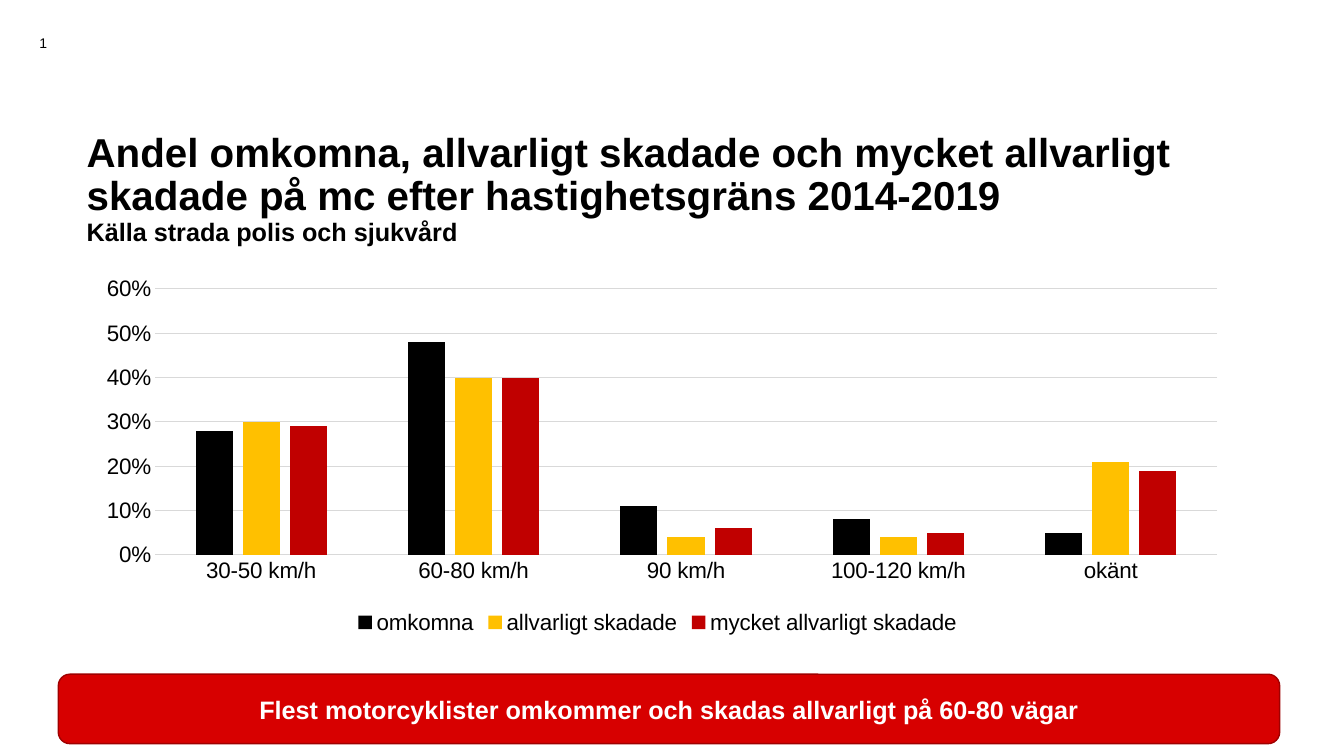
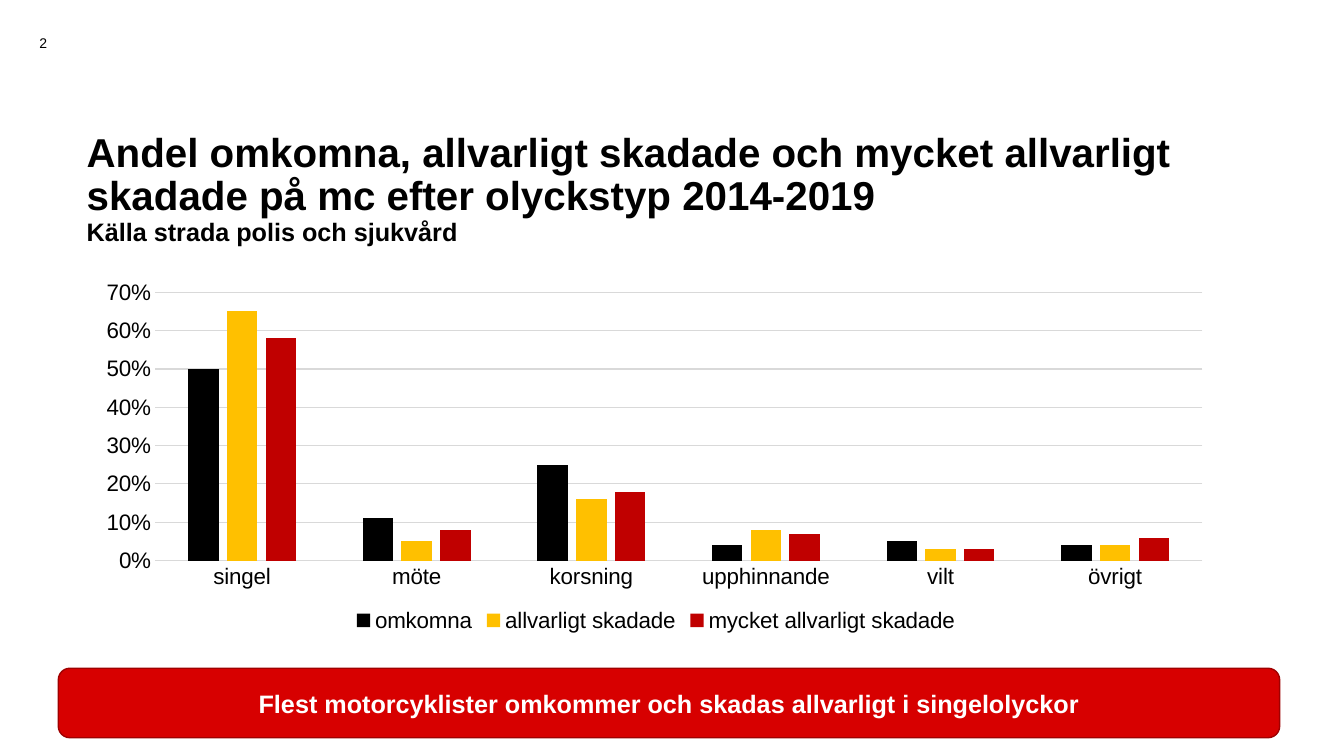
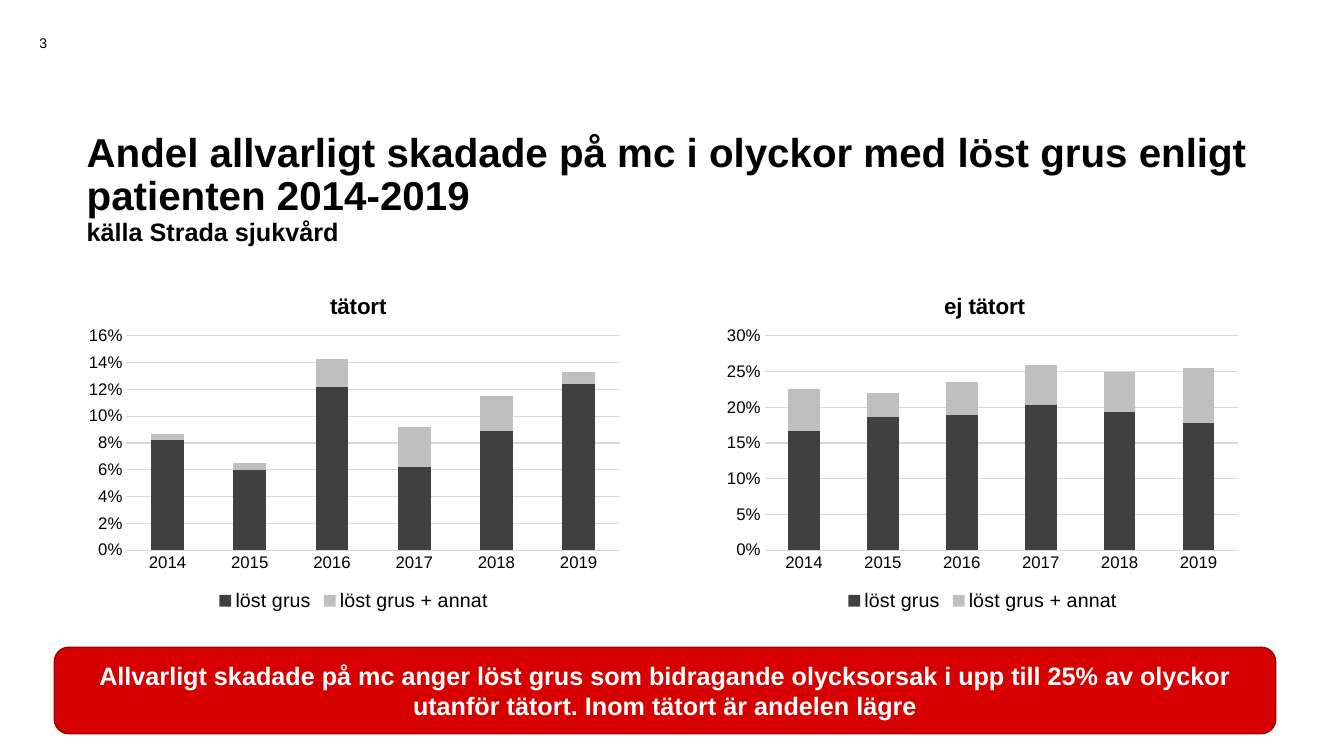
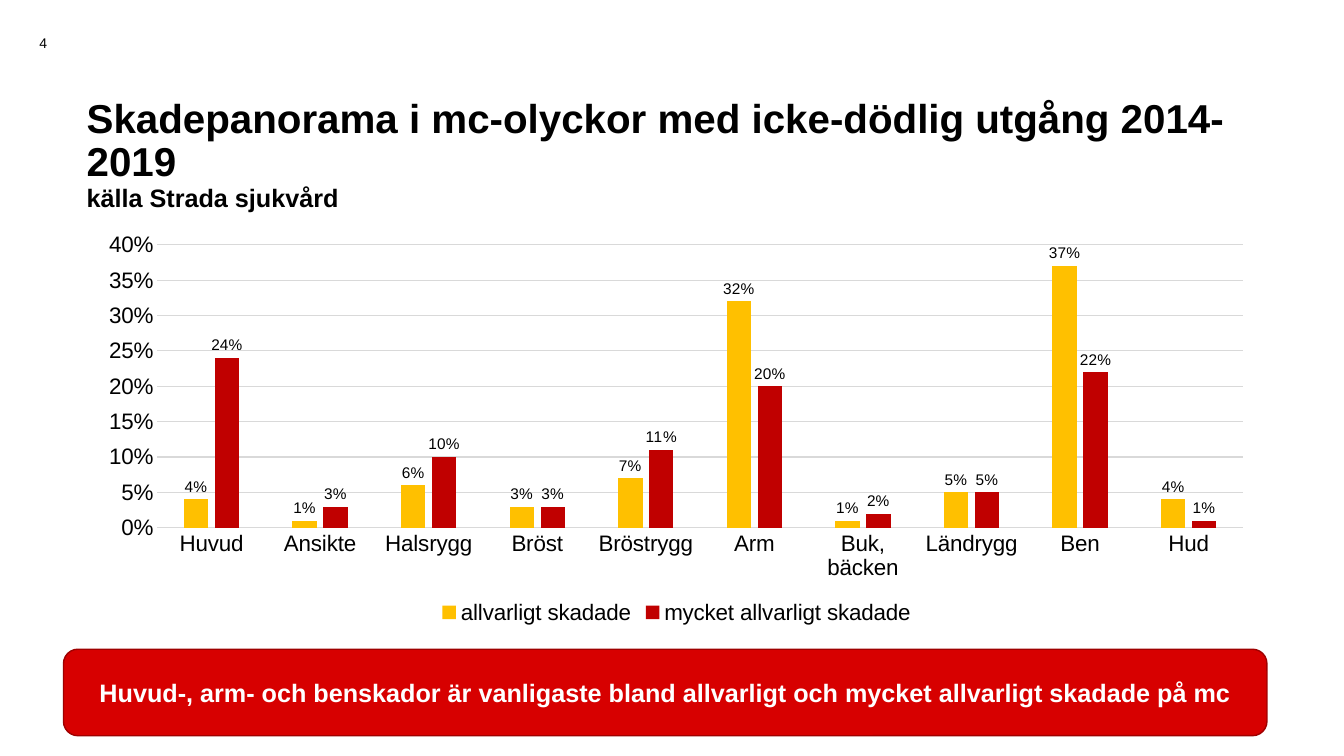
"""Build four slides on injured motorcyclists with charts and key messages."""
import pptx
import pptx.chart.data
import pptx.dml.color
import pptx.enum.chart
import pptx.enum.shapes
import pptx.enum.text
import pptx.oxml
import pptx.oxml.ns
import pptx.util

Cm = pptx.util.Cm
Pt = pptx.util.Pt
CHART_ENUM = pptx.enum.chart
TEXT_ENUM = pptx.enum.text

FONT = "Arial"
COLORS = {
    "text": "000000",
    "white": "FFFFFF",
    "banner": "D70000",
    "banner_edge": "9F0000",
    "grid": "D9D9D9",
    "omkomna": "000000",
    "allvarligt skadade": "FFC000",
    "mycket allvarligt skadade": "C00000",
    "löst grus": "404040",
    "löst grus + annat": "BFBFBF",
}
YEARS = ["2014", "2015", "2016", "2017", "2018", "2019"]
CLUSTERED = {"kind": CHART_ENUM.XL_CHART_TYPE.COLUMN_CLUSTERED,
             "gap": 219, "overlap": -27, "axis_size": 16, "legend_size": 16}
STACKED = {"kind": CHART_ENUM.XL_CHART_TYPE.COLUMN_STACKED,
           "gap": 150, "overlap": 100, "axis_size": 12, "legend_size": 14}


def color(name):
    return pptx.dml.color.RGBColor.from_string(COLORS[name])


def set_format(target, values):
    for attribute, value in values.items():
        setattr(target, attribute, value)


def set_font(font, size, bold=False, tint="text"):
    set_format(font, {"name": FONT, "size": Pt(size), "bold": bold})
    font.color.rgb = color(tint)


def set_line(line, tint, width):
    line.color.rgb = color(tint)
    line.width = Pt(width)


def place(shape, box):
    edges = ("left", "top", "width", "height")
    set_format(shape, dict(zip(edges, map(Cm, box))))


def set_layout(parent, index, values):
    """Give a chart part a fixed place, in shares of the chart area."""
    for old in parent.findall(pptx.oxml.ns.qn("c:layout")):
        parent.remove(old)
    settings = "".join(f'<c:{tag} val="{value}"/>' for tag, value in values.items())
    parent.insert(index, pptx.oxml.parse_xml(
        f'<c:layout {pptx.oxml.ns.nsdecls("c")}>'
        f"<c:manualLayout>{settings}</c:manualLayout></c:layout>"))


def add_heading(slide, heading, source, top=3.53, width=30):
    title = slide.shapes.title
    place(title, (1.93, top, width, 2.49))
    frame = title.text_frame
    set_format(frame, {"word_wrap": True,
                       "auto_size": TEXT_ENUM.MSO_AUTO_SIZE.NONE,
                       "vertical_anchor": TEXT_ENUM.MSO_ANCHOR.MIDDLE})
    paragraph = frame.paragraphs[0]
    set_format(paragraph, {"alignment": TEXT_ENUM.PP_ALIGN.LEFT, "line_spacing": 0.9})
    for text, size in ((heading, 28.8), (source, 18)):
        if paragraph.runs:
            paragraph.add_line_break()
        run = paragraph.add_run()
        run.text = text
        set_font(run.font, size, bold=True)


def add_page_number(slide, number):
    page = slide.shapes.add_textbox(Cm(0), Cm(0.56), Cm(2.18), Cm(1.02))
    set_format(page.text_frame, {"word_wrap": True,
                                 "vertical_anchor": TEXT_ENUM.MSO_ANCHOR.MIDDLE})
    paragraph = page.text_frame.paragraphs[0]
    paragraph.alignment = TEXT_ENUM.PP_ALIGN.CENTER
    paragraph._p.append(pptx.oxml.parse_xml(
        f'<a:fld {pptx.oxml.ns.nsdecls("a")} type="slidenum" '
        'id="{B6F15528-21DE-4FAA-801E-634DDDAF4B2B}">'
        f'<a:rPr lang="sv-SE" sz="1000"><a:solidFill><a:srgbClr val="{COLORS["text"]}"/>'
        f'</a:solidFill><a:latin typeface="{FONT}"/></a:rPr><a:t>{number}</a:t></a:fld>'))


def add_banner(slide, message, box):
    banner = slide.shapes.add_shape(
        pptx.enum.shapes.MSO_SHAPE.ROUNDED_RECTANGLE, *map(Cm, box))
    banner.shadow.inherit = False
    banner.fill.solid()
    banner.fill.fore_color.rgb = color("banner")
    set_line(banner.line, "banner_edge", 1)
    set_format(banner.text_frame, {"word_wrap": True,
                                   "vertical_anchor": TEXT_ENUM.MSO_ANCHOR.MIDDLE})
    paragraph = banner.text_frame.paragraphs[0]
    paragraph.alignment = TEXT_ENUM.PP_ALIGN.CENTER
    run = paragraph.add_run()
    run.text = message
    set_font(run.font, 18, bold=True, tint="white")


def format_axes(chart, size, top, step):
    for axis in (chart.category_axis, chart.value_axis):
        set_format(axis, {"major_tick_mark": CHART_ENUM.XL_TICK_MARK.NONE,
                          "minor_tick_mark": CHART_ENUM.XL_TICK_MARK.NONE})
        set_font(axis.tick_labels.font, size)
    set_line(chart.category_axis.format.line, "grid", 0.75)
    values = chart.value_axis
    set_format(values, {"minimum_scale": 0, "maximum_scale": top, "major_unit": step,
                        "has_major_gridlines": True})
    set_format(values.tick_labels, {"number_format": "0%",
                                    "number_format_is_linked": False})
    values.format.line.fill.background()
    set_line(values.major_gridlines.format.line, "grid", 0.75)


def add_chart_title(chart, text, left):
    chart.has_title = True
    paragraph = chart.chart_title.text_frame.paragraphs[0]
    run = paragraph.add_run()
    run.text = text
    set_font(run.font, 16, bold=True)
    set_layout(chart.chart_title._element, 1,
               {"xMode": "edge", "yMode": "edge", "x": left, "y": 0.05})


def add_value_labels(series):
    labels = series.data_labels
    set_format(labels, {"show_value": True, "number_format": "0%",
                        "number_format_is_linked": False,
                        "position": CHART_ENUM.XL_LABEL_POSITION.OUTSIDE_END})
    set_font(labels.font, 11)


def add_columns(slide, style, box, plot_box, scale, categories, shares, labelled=False):
    """Add a column chart of shares, a dict of series name to values."""
    data = pptx.chart.data.CategoryChartData(number_format="0%")
    data.categories = categories
    for name, values in shares.items():
        data.add_series(name, values)
    chart = slide.shapes.add_chart(style["kind"], *map(Cm, box), data).chart
    set_font(chart.font, style["axis_size"])
    set_format(chart, {"has_title": False, "has_legend": True})
    set_format(chart.legend, {"position": CHART_ENUM.XL_LEGEND_POSITION.BOTTOM,
                              "include_in_layout": False})
    set_font(chart.legend.font, style["legend_size"])
    format_axes(chart, style["axis_size"], *scale)
    plot = chart.plots[0]
    set_format(plot, {"gap_width": style["gap"], "overlap": style["overlap"],
                      "vary_by_categories": False})
    for series in plot.series:
        series.invert_if_negative = False
        series.format.fill.solid()
        series.format.fill.fore_color.rgb = color(series.name)
        if labelled:
            add_value_labels(series)
    set_layout(chart._chartSpace.chart.plotArea, 0,
               {"layoutTarget": "inner", "xMode": "edge", "yMode": "edge",
                **dict(zip("xywh", plot_box))})
    return chart


def build_speed_limits(slide):
    add_heading(slide, "Andel omkomna, allvarligt skadade och mycket allvarligt skadade "
                "på mc efter hastighetsgräns 2014-2019",
                "Källa strada polis och sjukvård", width=31.19)
    add_columns(slide, CLUSTERED, (2.18, 6.91, 28.78, 9.19), (0.06, 0.04, 0.93, 0.73),
                (0.6, 0.1),
                ["30-50 km/h", "60-80 km/h", "90 km/h", "100-120 km/h", "okänt"],
                {"omkomna": [0.28, 0.48, 0.11, 0.08, 0.05],
                 "allvarligt skadade": [0.3, 0.4, 0.04, 0.04, 0.21],
                 "mycket allvarligt skadade": [0.29, 0.4, 0.06, 0.05, 0.19]})
    add_banner(slide, "Flest motorcyklister omkommer och skadas allvarligt på 60-80 vägar",
               (1.47, 16.99, 30.78, 1.75))


def build_accident_types(slide):
    add_heading(slide, "Andel omkomna, allvarligt skadade och mycket allvarligt skadade "
                "på mc efter olyckstyp 2014-2019", "Källa strada polis och sjukvård")
    add_columns(slide, CLUSTERED, (2.18, 6.91, 28.7, 9.14), (0.06, 0.05, 0.92, 0.74),
                (0.7, 0.1),
                ["singel", "möte", "korsning", "upphinnande", "vilt", "övrigt"],
                {"omkomna": [0.5, 0.11, 0.25, 0.04, 0.05, 0.04],
                 "allvarligt skadade": [0.65, 0.05, 0.16, 0.08, 0.03, 0.04],
                 "mycket allvarligt skadade": [0.58, 0.08, 0.18, 0.07, 0.03, 0.06]})
    add_banner(slide, "Flest motorcyklister omkommer och skadas allvarligt i singelolyckor",
               (1.47, 16.84, 30.78, 1.75))


def build_loose_gravel(slide):
    add_heading(slide, "Andel allvarligt skadade på mc i olyckor med löst grus enligt "
                "patienten 2014-2019", "källa Strada sjukvård")
    areas = (
        ("tätort", 0.45, 1.93, 13.97, (0.16, 0.02),
         [0.082, 0.06, 0.122, 0.062, 0.089, 0.124],
         [0.005, 0.005, 0.021, 0.03, 0.026, 0.009]),
        ("ej tätort", 0.42, 18.06, 13.41, (0.3, 0.05),
         [0.167, 0.187, 0.189, 0.203, 0.194, 0.178],
         [0.059, 0.033, 0.046, 0.056, 0.056, 0.077]),
    )
    for area, title_left, left, width, scale, gravel, gravel_and_other in areas:
        chart = add_columns(slide, STACKED, (left, 6.81, width, 8.71),
                            (0.09, 0.19, 0.89, 0.62), scale, YEARS,
                            {"löst grus": gravel, "löst grus + annat": gravel_and_other})
        add_chart_title(chart, area, title_left)
    add_banner(slide, "Allvarligt skadade på mc anger löst grus som bidragande olycksorsak "
               "i upp till 25% av olyckor utanför tätort. Inom tätort är andelen lägre",
               (1.37, 16.31, 30.78, 2.18))


def build_injuries(slide):
    add_heading(slide, "Skadepanorama i mc-olyckor med icke-dödlig utgång 2014-2019",
                "källa Strada sjukvård", top=2.67)
    add_columns(slide, CLUSTERED, (2.18, 5.66, 29.74, 10.19), (0.06, 0.05, 0.92, 0.7),
                (0.4, 0.05),
                ["Huvud", "Ansikte", "Halsrygg", "Bröst", "Bröstrygg", "Arm",
                 "Buk, bäcken", "Ländrygg", "Ben", "Hud"],
                {"allvarligt skadade":
                 [0.04, 0.01, 0.06, 0.03, 0.07, 0.32, 0.01, 0.05, 0.37, 0.04],
                 "mycket allvarligt skadade":
                 [0.24, 0.03, 0.1, 0.03, 0.11, 0.2, 0.02, 0.05, 0.22, 0.01]},
                labelled=True)
    add_banner(slide, "Huvud-, arm- och benskador är vanligaste bland allvarligt och "
               "mycket allvarligt skadade på mc", (1.6, 16.36, 30.33, 2.18))


def main():
    deck = pptx.Presentation()
    set_format(deck, {"slide_width": Cm(33.87), "slide_height": Cm(19.05)})
    title_only = deck.slide_layouts.get_by_name("Title Only")
    builders = (build_speed_limits, build_accident_types, build_loose_gravel, build_injuries)
    for number, build in enumerate(builders, start=1):
        slide = deck.slides.add_slide(title_only)
        add_page_number(slide, number)
        build(slide)
    deck.save("out.pptx")


if __name__ == "__main__":
    main()
